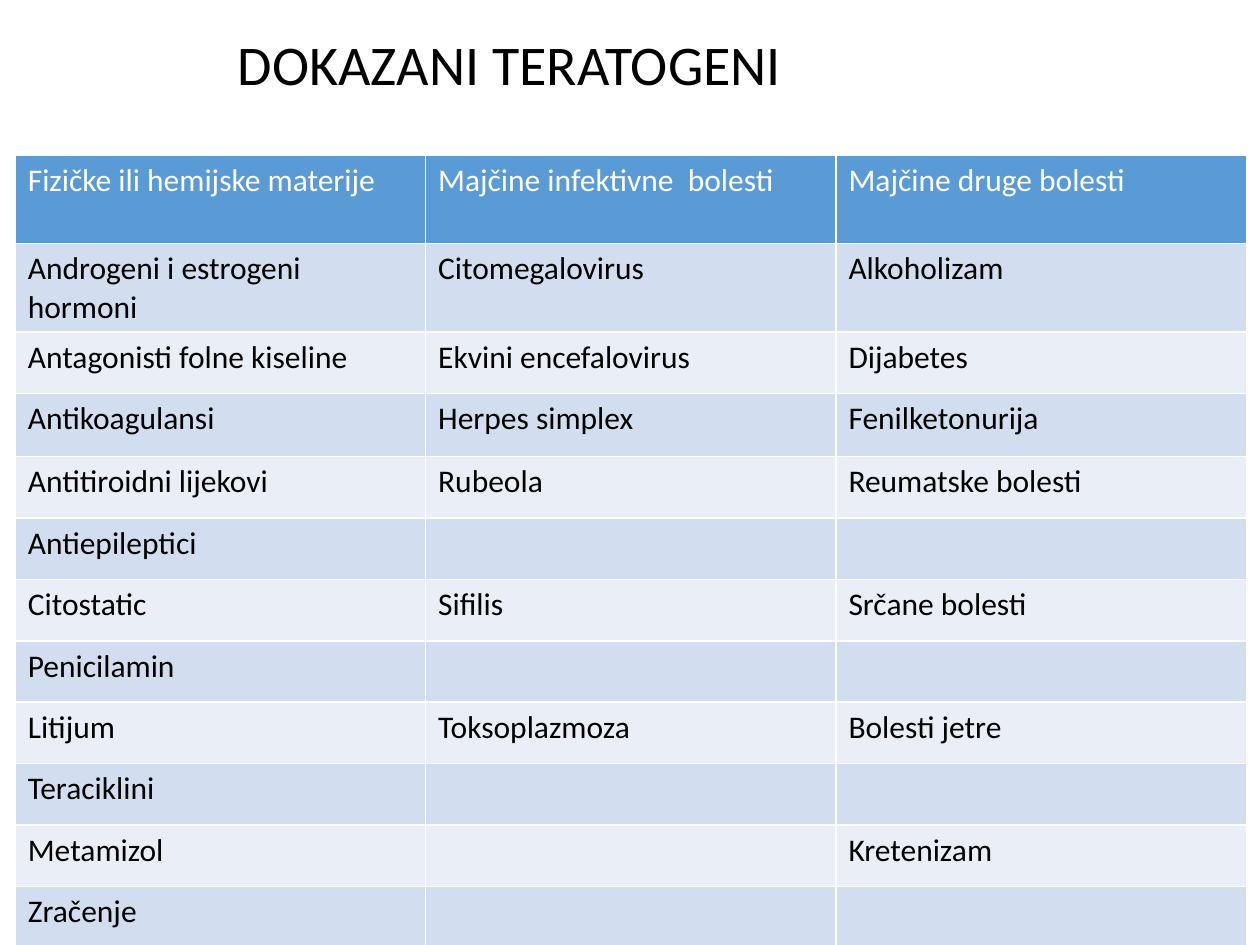
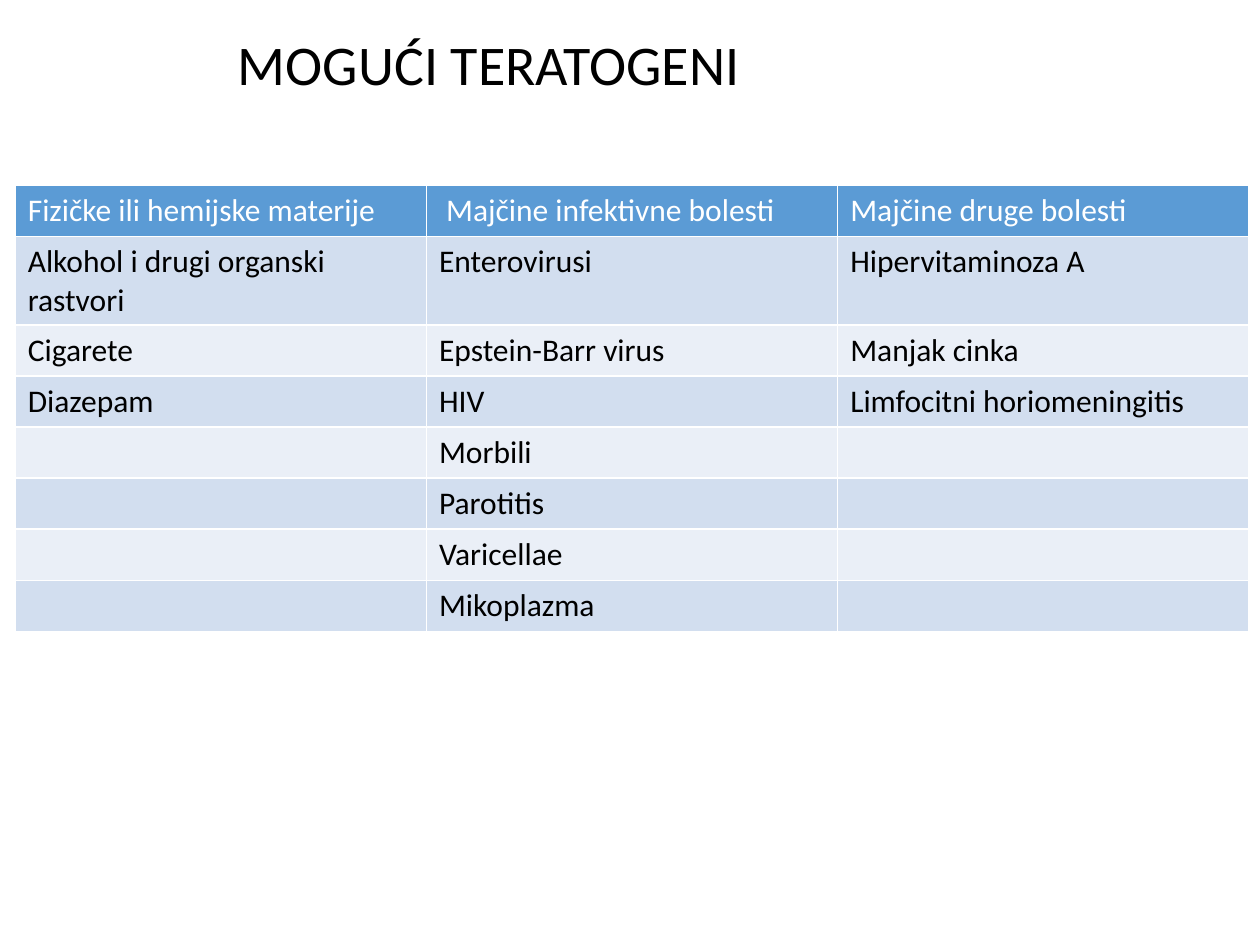
from pptx import Presentation
from pptx import util as u
from pptx.dml import color
from pptx.enum import text

FONT = "Calibri"
WHITE, BLACK = "FFFFFF", "000000"
HEADER_FILL = "5B9BD5"
BAND_FILLS = ("D2DEEF", "EAEFF7")
TABLE_LEFT = 8.7

PROVEN = [
    ("Fizičke ili hemijske materije", "Majčine infektivne  bolesti", "Majčine druge bolesti"),
    ("Androgeni i estrogeni hormoni", "Citomegalovirus", "Alkoholizam"),
    ("Antagonisti folne kiseline", "Ekvini encefalovirus", "Dijabetes"),
    ("Antikoagulansi", "Herpes simplex", "Fenilketonurija"),
    ("Antitiroidni lijekovi", "Rubeola", "Reumatske bolesti"),
    ("Antiepileptici", "", ""),
    ("Citostatic", "Sifilis", "Srčane bolesti"),
    ("Penicilamin", "", ""),
    ("Litijum", "Toksoplazmoza", "Bolesti jetre"),
    ("Teraciklini", "", ""),
    ("Metamizol", "", "Kretenizam"),
    ("Zračenje", "", ""),
]
PROVEN_HEIGHTS = [50.4, 50.8, 35.1, 36] + [35.1] * 8

POSSIBLE = [
    ("Fizičke ili hemijske materije", " Majčine infektivne bolesti", "Majčine druge bolesti"),
    ("Alkohol i drugi organski rastvori", "Enterovirusi", "Hipervitaminoza A"),
    ("Cigarete", "Epstein-Barr virus", "Manjak cinka"),
    ("Diazepam", "HIV", "Limfocitni horiomeningitis"),
    ("", "Morbili", ""),
    ("", "Parotitis", ""),
    ("", "Varicellae", ""),
    ("", "Mikoplazma", ""),
]
POSSIBLE_HEIGHTS = [29.2] * len(POSSIBLE)


def rgb(value):
    return color.RGBColor.from_string(value)


def style_font(font, size, font_color):
    font.name = FONT
    font.size = u.Pt(size)
    font.bold = False
    font.color.rgb = rgb(font_color)


def add_title(slide, title):
    box = slide.shapes.add_textbox(u.Pt(136), u.Pt(0), u.Pt(560), u.Pt(77))
    frame = box.text_frame
    frame.word_wrap = True
    frame.margin_left = 0
    frame.vertical_anchor = text.MSO_ANCHOR.MIDDLE
    frame.text = title
    para = frame.paragraphs[0]
    para.line_spacing = 0.9
    style_font(para.runs[0].font, 32, BLACK)


def fill_cell(cell, content, fill, font_color):
    cell.fill.solid()
    cell.fill.fore_color.rgb = rgb(fill)
    para = cell.text_frame.paragraphs[0]
    para.text = content
    style_font(para.font, 18, font_color)
    for span in para.runs:
        style_font(span.font, 18, font_color)


def add_banded_table(slide, top, column_width, rows, heights):
    columns = len(rows[0])
    table = slide.shapes.add_table(
        len(rows), columns, u.Pt(TABLE_LEFT), u.Pt(top),
        u.Pt(column_width * columns), u.Pt(sum(heights))).table
    for column in table.columns:
        column.width = u.Pt(column_width)
    for index, (contents, height) in enumerate(zip(rows, heights)):
        table.rows[index].height = u.Pt(height)
        fill = BAND_FILLS[(index - 1) % 2] if index else HEADER_FILL
        font_color = BLACK if index else WHITE
        for cell, content in zip(table.rows[index].cells, contents):
            fill_cell(cell, content, fill, font_color)


def add_table_slide(deck, title, top, column_width, rows, heights):
    slide = deck.slides.add_slide(deck.slide_layouts[6])
    add_title(slide, title)
    add_banded_table(slide, top, column_width, rows, heights)


def main():
    deck = Presentation()
    deck.slide_width, deck.slide_height = u.Pt(720), u.Pt(540)
    add_table_slide(deck, "DOKAZANI TERATOGENI", 88.6, 234.5, PROVEN, PROVEN_HEIGHTS)
    add_table_slide(deck, "MOGUĆI TERATOGENI", 106, 235, POSSIBLE, POSSIBLE_HEIGHTS)
    deck.save("out.pptx")


if __name__ == "__main__":
    main()
